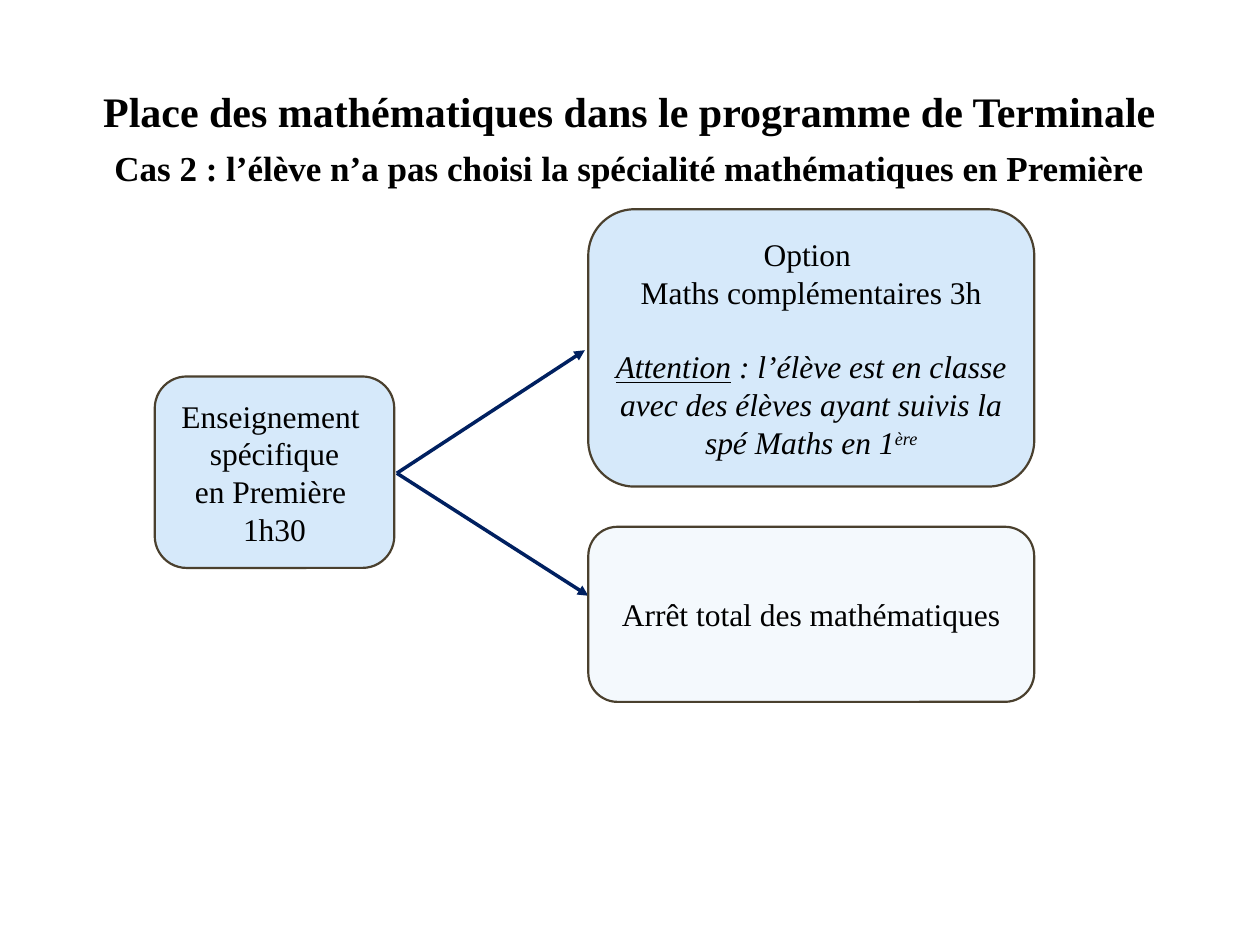
from dataclasses import dataclass, field
from typing import Optional

import pptx
import pptx.dml.color
import pptx.enum.shapes
import pptx.enum.text
import pptx.oxml
import pptx.oxml.ns
import pptx.util
from pptx.util import Cm

COLORS = {"text": "000000", "box": "D6E9FA", "border": "4A402E", "arrow": "002060"}
FONT = "Times New Roman"
BODY_SIZE = 18


@dataclass
class Run:
    text: str
    format: dict = field(default_factory=dict)
    baseline: int = 0


@dataclass
class Para:
    runs: list[Run]
    format: dict = field(default_factory=dict)


@dataclass
class Box:
    left: float
    top: float
    width: float
    height: float
    paras: list[Para]
    fill: Optional[str] = "box"
    alpha: int = 100


def rgb(name: str) -> pptx.dml.color.RGBColor:
    return pptx.dml.color.RGBColor.from_string(COLORS[name])


def set_all(target: object, values: dict) -> None:
    for name, value in values.items():
        setattr(target, name, value)


def plain(text: str) -> Para:
    return Para([Run(text)])


def heading(text: str, size: int, after: int = 0) -> Para:
    return Para([Run(text, {"size": pptx.util.Pt(size), "bold": True})],
                {"space_after": pptx.util.Pt(after)})


def add_text(tf, paras: list[Para]) -> None:
    set_all(tf, {"word_wrap": True,
                 "vertical_anchor": pptx.enum.text.MSO_ANCHOR.MIDDLE})
    for i, para in enumerate(paras):
        p = tf.add_paragraph() if i else tf.paragraphs[0]
        set_all(p, {"alignment": pptx.enum.text.PP_ALIGN.CENTER, **para.format})
        for run in para.runs:
            r = p.add_run()
            r.text = run.text
            set_all(r.font, {"name": FONT, "size": pptx.util.Pt(BODY_SIZE), **run.format})
            r.font.color.rgb = rgb("text")
            if run.baseline:
                r._r.get_or_add_rPr().set("baseline", str(run.baseline * 1000))


def add_box(slide, box: Box) -> None:
    s = slide.shapes.add_shape(
        pptx.enum.shapes.MSO_SHAPE.ROUNDED_RECTANGLE,
        Cm(box.left), Cm(box.top), Cm(box.width), Cm(box.height))
    s.shadow.inherit = False
    if box.fill:
        s.fill.solid()
        s.fill.fore_color.rgb = rgb(box.fill)
        if box.alpha < 100:
            color = s._element.spPr.find(".//" + pptx.oxml.ns.qn("a:srgbClr"))
            alpha = pptx.oxml.parse_xml(
                f'<a:alpha {pptx.oxml.ns.nsdecls("a")} val="{box.alpha * 1000}"/>')
            color.append(alpha)
        s.line.color.rgb = rgb("border")
        s.line.width = pptx.util.Pt(1.25)
    else:
        s.fill.background()
        s.line.fill.background()
    add_text(s.text_frame, box.paras)


def add_arrow(slide, start: tuple[float, float], end: tuple[float, float]) -> None:
    s = slide.shapes.add_connector(
        pptx.enum.shapes.MSO_CONNECTOR.STRAIGHT, *map(Cm, start + end))
    s.line.color.rgb = rgb("arrow")
    s.line.width = pptx.util.Pt(2)
    ns = pptx.oxml.ns.nsdecls("a")
    s.line._get_or_add_ln().append(
        pptx.oxml.parse_xml(f'<a:tailEnd {ns} type="triangle"/>'))
    s._element.spPr.append(pptx.oxml.parse_xml(f"<a:effectLst {ns}/>"))


ITALIC = {"italic": True}
BOXES = [
    Box(1.17, 1.35, 23.04, 2.84, [
        heading("Place des mathématiques dans le programme de Terminale", 24, 6),
        heading("Cas 2 : l’élève n’a pas choisi la spécialité mathématiques en Première", 20),
    ], fill=None),
    Box(3.12, 7.59, 4.83, 3.86, [
        plain(t) for t in ("Enseignement ", "spécifique", "en Première ", "1h30")]),
    Box(11.86, 10.62, 8.99, 3.53, [plain("Arrêt total des mathématiques")], alpha=25),
    Box(11.86, 4.22, 8.99, 5.59, [
        plain("Option "),
        plain("Maths complémentaires 3h"),
        Para([
            Run("Attention", {**ITALIC, "underline": True}),
            Run(" : l’élève est en classe avec des élèves ayant suivis la spé Maths en 1",
                ITALIC),
            Run("ère", ITALIC, baseline=30),
        ], {"space_before": pptx.util.Pt(21)}),
    ]),
]
ARROW_START = (8.0, 9.54)
ARROW_ENDS = [(11.86, 12.01), (11.79, 7.06)]


def main() -> None:
    prs = pptx.Presentation()
    set_all(prs, {"slide_width": Cm(25.4), "slide_height": Cm(19.05)})
    slide = prs.slides.add_slide(prs.slide_layouts[6])
    for end in ARROW_ENDS:
        add_arrow(slide, ARROW_START, end)
    for box in BOXES:
        add_box(slide, box)
    prs.save("out.pptx")


if __name__ == "__main__":
    main()
